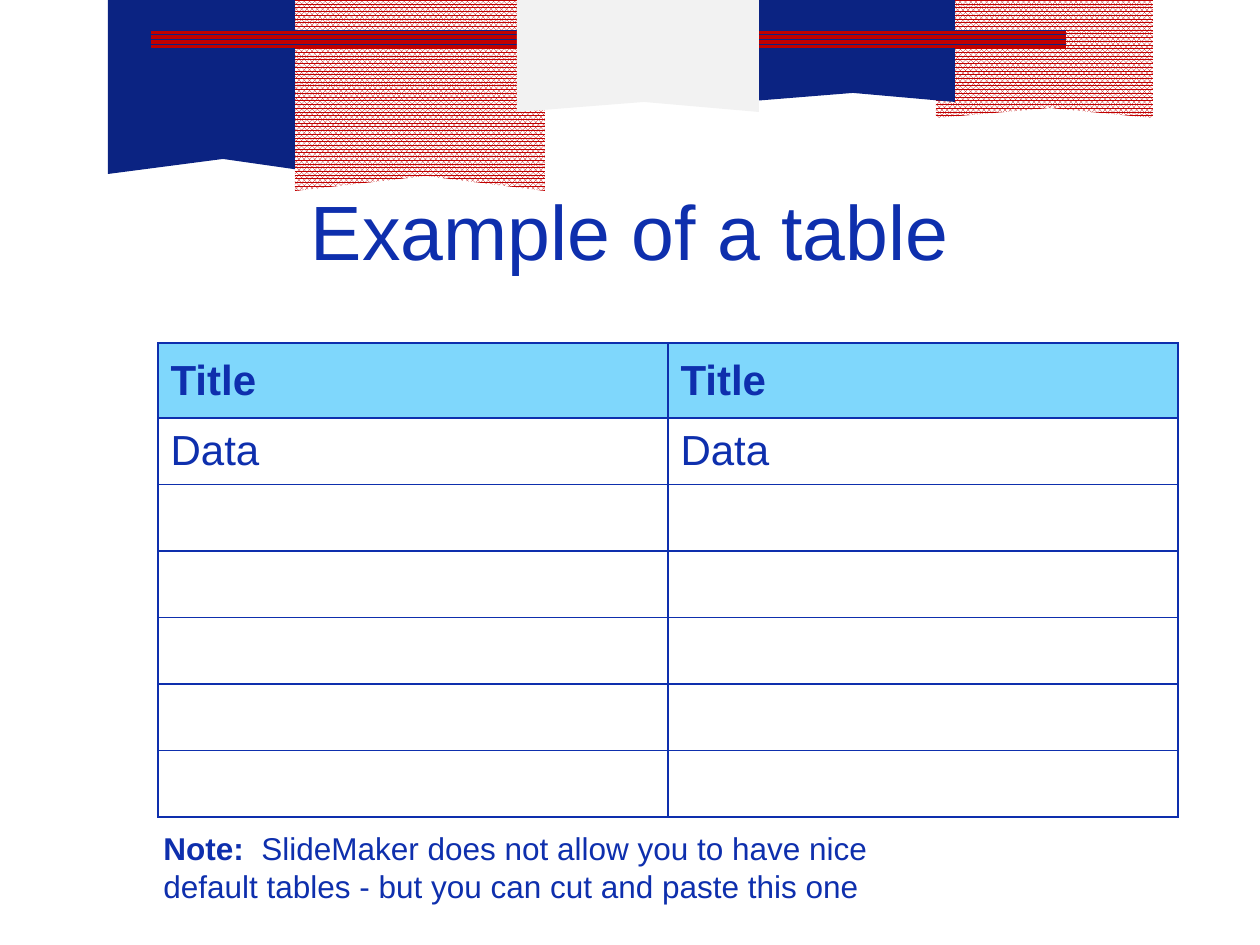
from dataclasses import dataclass

import pptx
import pptx.dml.color
import pptx.enum.dml
import pptx.enum.shapes
import pptx.enum.text
import pptx.oxml
import pptx.oxml.ns
import pptx.util

PATTERN = pptx.enum.dml.MSO_PATTERN
ANCHOR = pptx.enum.text.MSO_ANCHOR


@dataclass(frozen=True)
class Theme:
    font: str = "Arial"
    ink: str = "0E2FAD"
    navy: str = "0B2382"
    red: str = "C00000"
    white: str = "FFFFFF"
    pale: str = "F2F2F2"
    header: str = "7FD7FC"
    title_size: int = 44
    table_size: int = 24
    note_size: int = 18
    border_width: int = 1


class SlideBuilder:
    def __init__(self, slide, theme):
        self.slide = slide
        self.theme = theme

    def px(self, length):
        return pptx.util.Emu(round(length * 914400 / 126))

    def color(self, value):
        return pptx.dml.color.RGBColor.from_string(value)

    def paint(self, shape, color, pattern=None, back=None):
        shape.shadow.inherit = False
        shape.line.fill.background()
        if pattern is None:
            shape.fill.solid()
            shape.fill.fore_color.rgb = self.color(color)
        else:
            shape.fill.patterned()
            shape.fill.pattern = pattern
            shape.fill.fore_color.rgb = self.color(color)
            shape.fill.back_color.rgb = self.color(back)

    def style(self, run, size, bold=False):
        run.font.name = self.theme.font
        run.font.size = pptx.util.Pt(size)
        run.font.bold = bold
        run.font.color.rgb = self.color(self.theme.ink)

    def place(self, shape, left, top, width, height):
        shape.left, shape.top = self.px(left), self.px(top)
        shape.width, shape.height = self.px(width), self.px(height)

    def banner(self, left, right, bottom, middle, notch, *paint):
        points = [(right, 0), (right, bottom), (middle, notch), (left, bottom)]
        builder = self.slide.shapes.build_freeform(self.px(left), 0)
        builder.add_line_segments([(self.px(x), self.px(y)) for x, y in points])
        self.paint(builder.convert_to_shape(), *paint)

    def bar(self, left, top, width, height, *paint):
        box = [self.px(length) for length in (left, top, width, height)]
        rectangle = pptx.enum.shapes.MSO_SHAPE.RECTANGLE
        self.paint(self.slide.shapes.add_shape(rectangle, *box), *paint)

    def title(self, text, *box):
        title = self.slide.shapes.title
        self.place(title, *box)
        title.text_frame.text = text
        title.text_frame.vertical_anchor = ANCHOR.MIDDLE
        paragraph = title.text_frame.paragraphs[0]
        paragraph.alignment = pptx.enum.text.PP_ALIGN.CENTER
        self.style(paragraph.runs[0], self.theme.title_size)

    def border(self, cell):
        properties = cell._tc.get_or_add_tcPr()
        width = pptx.util.Pt(self.theme.border_width)
        for index, side in enumerate(("lnL", "lnR", "lnT", "lnB")):
            properties.insert(index, pptx.oxml.parse_xml(
                f'<a:{side} {pptx.oxml.ns.nsdecls("a")} w="{width}"><a:solidFill>'
                f'<a:srgbClr val="{self.theme.ink}"/></a:solidFill></a:{side}>'))

    def table(self, rows, left, top, width, height, header_height):
        box = [self.px(length) for length in (left, top, width, height)]
        table = self.slide.shapes.add_table(len(rows), len(rows[0]), *box).table
        table.first_row = table.horz_banding = False
        row_height = (height - header_height) / (len(rows) - 1)
        for index, texts in enumerate(rows):
            is_header = index == 0
            table.rows[index].height = self.px(header_height if is_header else row_height)
            for cell, text in zip(table.rows[index].cells, texts):
                cell.vertical_anchor = ANCHOR.MIDDLE
                if is_header:
                    cell.fill.solid()
                    cell.fill.fore_color.rgb = self.color(self.theme.header)
                else:
                    cell.fill.background()
                self.border(cell)
                cell.text_frame.text = text
                for run in cell.text_frame.paragraphs[0].runs:
                    self.style(run, self.theme.table_size, is_header)

    def note(self, label, text, *box):
        shape = self.slide.shapes.add_textbox(*[self.px(length) for length in box])
        shape.text_frame.word_wrap = True
        paragraph = shape.text_frame.paragraphs[0]
        for content, bold in ((label, True), (text, False)):
            run = paragraph.add_run()
            run.text = content
            self.style(run, self.theme.note_size, bold)


def main():
    presentation = pptx.Presentation()
    presentation.slide_width = pptx.util.Inches(10)
    presentation.slide_height = pptx.util.Inches(7.5)
    theme = Theme()
    slide = presentation.slides.add_slide(presentation.slide_layouts[5])
    builder = SlideBuilder(slide, theme)

    dotted = (theme.red, PATTERN.PERCENT_80, theme.white)
    striped = (theme.red, PATTERN.DARK_HORIZONTAL, theme.navy)
    builder.banner(108, 328, 174, 223, 159, theme.navy)
    builder.banner(295, 545, 191, 426, 176, *dotted)
    builder.banner(936, 1153, 118, 1050, 108, *dotted)
    builder.banner(741, 955, 102, 853, 93, theme.navy)
    builder.bar(151, 30, 915, 18, *striped)
    builder.banner(517, 759, 112, 644, 102, theme.pale)

    builder.title("Example of a table", 63, 151, 1134, 158)
    rows = [["Title"] * 2, ["Data"] * 2] + [[""] * 2] * 5
    builder.table(rows, 158, 343, 1020, 474, 75)
    builder.note(
        "Note:  ",
        "SlideMaker does not allow you to have nice default tables"
        " - but you can cut and paste this one",
        151, 823, 777, 89)
    presentation.save("out.pptx")


if __name__ == "__main__":
    main()
